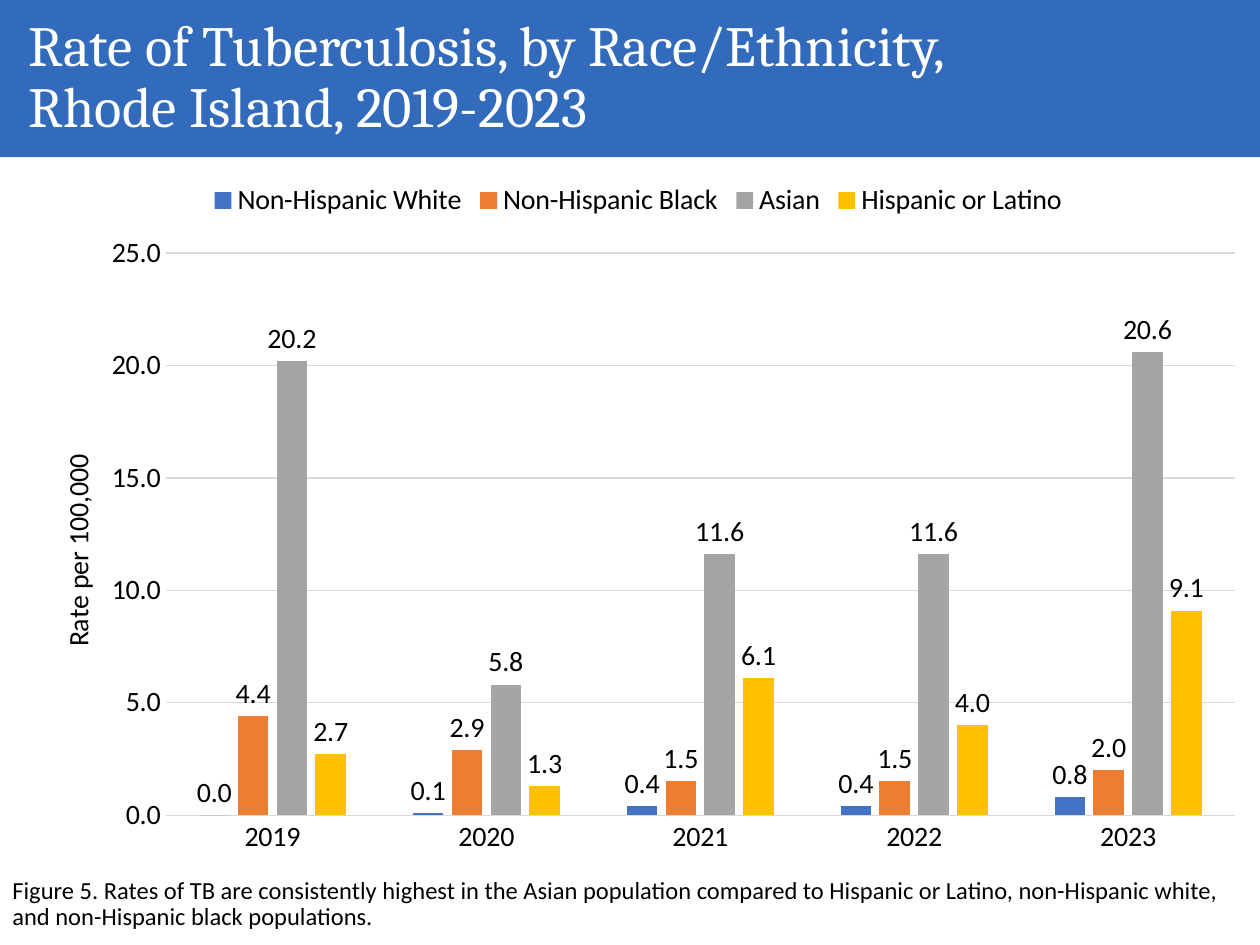
from lxml import etree
from pptx import Presentation
from pptx import util as u
from pptx.chart.data import CategoryChartData
from pptx.dml.color import RGBColor
from pptx.enum import chart as charts, shapes, text
from pptx.oxml.ns import qn

TITLE = "Rate of Tuberculosis, by Race/Ethnicity,\vRhode Island, 2019-2023"
CAPTION = ("Figure 5. Rates of TB are consistently highest in the Asian population compared to "
           "Hispanic or Latino, non-Hispanic white, and non-Hispanic black populations.")
AXIS_TITLE = "Rate per 100,000"
YEARS = ["2019", "2020", "2021", "2022", "2023"]
RATES = [
    ("Non-Hispanic White", "4472C4", [0.0, 0.1, 0.4, 0.4, 0.8]),
    ("Non-Hispanic Black", "ED7D31", [4.4, 2.9, 1.5, 1.5, 2.0]),
    ("Asian", "A5A5A5", [20.2, 5.8, 11.6, 11.6, 20.6]),
    ("Hispanic or Latino", "FFC000", [2.7, 1.3, 6.1, 4.0, 9.1]),
]
GRID = "D9D9D9"


def color(value):
    return RGBColor.from_string(value)


def set_font(font, name, size, value="000000"):
    font.name, font.size, font.bold = name, u.Pt(size), False
    font.color.rgb = color(value)


def set_line(line):
    line.color.rgb = color(GRID)
    line.width = u.Pt(0.75)


def add_text(slide, content, box, name, size, value, anchor):
    shape = slide.shapes.add_textbox(*map(u.Cm, box))
    frame = shape.text_frame
    frame.word_wrap = True
    frame.vertical_anchor = anchor
    frame.text = content
    paragraph = frame.paragraphs[0]
    paragraph.line_spacing = 0.9
    set_font(paragraph.font, name, size, value)


def set_layout(parent, index, **settings):
    """Place a chart part by hand, in fractions of the chart's size."""
    for old in parent.findall(qn("c:layout")):
        parent.remove(old)
    layout = etree.Element(qn("c:layout"))
    manual = etree.SubElement(layout, qn("c:manualLayout"))
    for key, value in settings.items():
        etree.SubElement(manual, qn("c:" + key)).set("val", str(value))
    parent.insert(index, layout)


def add_rate_chart(slide):
    data = CategoryChartData(number_format="0.0")
    data.categories = YEARS
    for name, _, values in RATES:
        data.add_series(name, values)
    chart = slide.shapes.add_chart(
        charts.XL_CHART_TYPE.COLUMN_CLUSTERED,
        u.Cm(0.33), u.Cm(3.4), u.Cm(25.07), u.Cm(14.17), data).chart
    set_font(chart.font, "Calibri", 16)
    chart.has_title = False
    chart.has_legend = True
    chart.legend.position = charts.XL_LEGEND_POSITION.TOP
    chart.legend.include_in_layout = False
    set_font(chart.legend.font, "Calibri", 16)

    plot = chart.plots[0]
    plot.vary_by_categories = False
    plot.gap_width, plot.overlap = 219, -27
    for series, (_, fill, _) in zip(plot.series, RATES):
        series.format.fill.solid()
        series.format.fill.fore_color.rgb = color(fill)
        labels = series.data_labels
        labels.show_value = True
        labels.number_format, labels.number_format_is_linked = "0.0", False
        labels.position = charts.XL_LABEL_POSITION.OUTSIDE_END
        set_font(labels.font, "Calibri", 16)

    category_axis, value_axis = chart.category_axis, chart.value_axis
    for axis in (category_axis, value_axis):
        axis.major_tick_mark = axis.minor_tick_mark = charts.XL_TICK_MARK.NONE
        set_font(axis.tick_labels.font, "Calibri", 16)
    set_line(category_axis.format.line)
    value_axis.format.line.fill.background()
    value_axis.minimum_scale, value_axis.maximum_scale, value_axis.major_unit = 0, 25, 5
    value_axis.tick_labels.number_format = "0.0"
    value_axis.tick_labels.number_format_is_linked = False
    set_line(value_axis.major_gridlines.format.line)

    title = value_axis.axis_title
    title.text_frame.text = AXIS_TITLE
    set_font(title.text_frame.paragraphs[0].font, "Calibri", 16)
    title.text_frame._txBody.bodyPr.set("rot", "-5400000")
    title.text_frame._txBody.bodyPr.set("vert", "horz")
    set_layout(title._element, 1, xMode="edge", yMode="edge", x=0.03, y=0.4)
    set_layout(chart._chartSpace.chart.plotArea, 0, layoutTarget="inner",
               xMode="edge", yMode="edge", x=0.12, y=0.12, w=0.86, h=0.8)


def main():
    presentation = Presentation()
    presentation.slide_width, presentation.slide_height = u.Cm(25.4), u.Cm(19.05)
    slide = presentation.slides.add_slide(presentation.slide_layouts[6])

    banner = slide.shapes.add_shape(shapes.MSO_SHAPE.RECTANGLE, 0, 0,
                                    presentation.slide_width, u.Cm(3.17))
    banner.shadow.inherit = False
    banner.fill.solid()
    banner.fill.fore_color.rgb = color("326ABC")
    banner.line.fill.background()

    add_text(slide, TITLE, (0.33, 0.28, 21.59, 2.62), "Cambria", 32.4, "FFFFFF",
             text.MSO_ANCHOR.MIDDLE)
    add_rate_chart(slide)
    add_text(slide, CAPTION, (0, 17.58, 25.07, 2.08), "Calibri", 14, "000000",
             text.MSO_ANCHOR.TOP)
    presentation.save("out.pptx")


if __name__ == "__main__":
    main()
